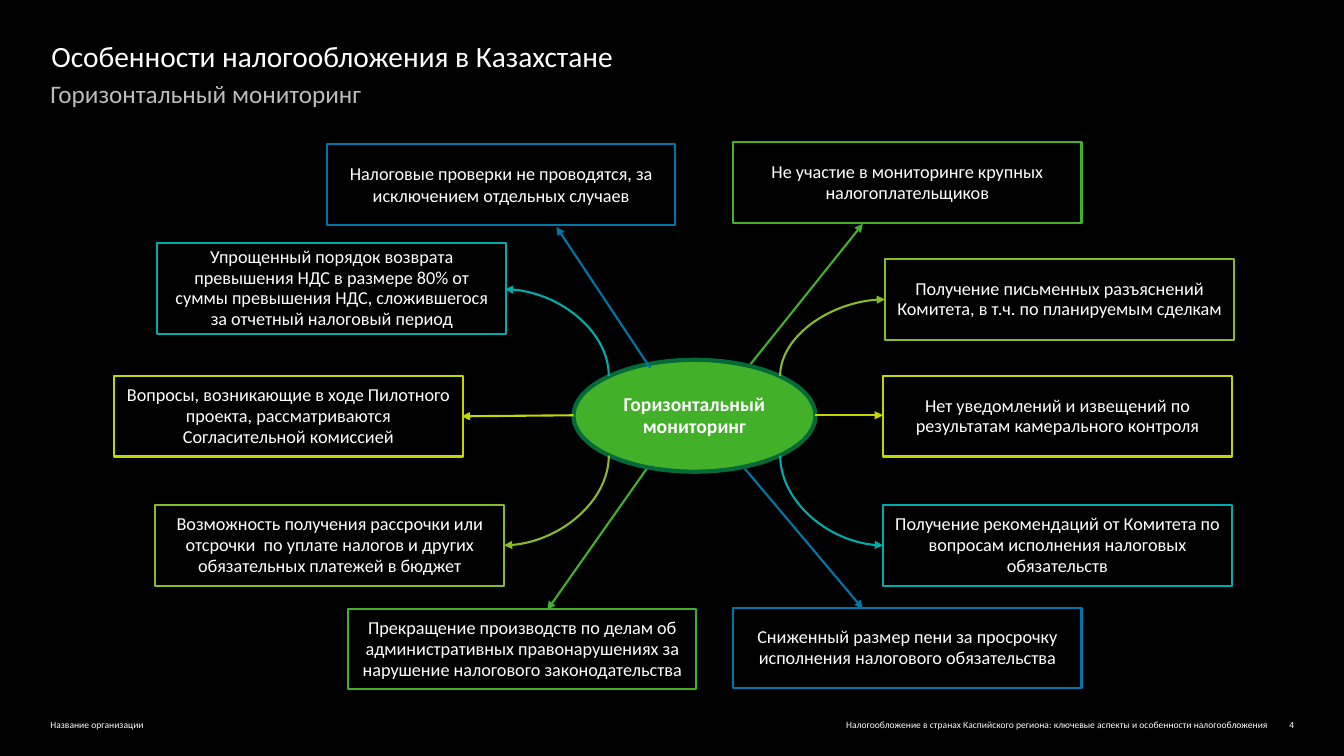
import pptx
import pptx.dml.color
import pptx.enum.shapes
import pptx.enum.text
import pptx.oxml.ns
import pptx.util
from lxml import etree

RGB = pptx.dml.color.RGBColor
KIND = pptx.enum.shapes.MSO_SHAPE
LINK = pptx.enum.shapes.MSO_CONNECTOR
ALIGN = pptx.enum.text.PP_ALIGN
ANCHOR = pptx.enum.text.MSO_ANCHOR
qn = pptx.oxml.ns.qn

BLACK = RGB(0x00, 0x00, 0x00)
WHITE = RGB(0xFF, 0xFF, 0xFF)
GREY = RGB(0xBB, 0xBC, 0xBC)
BLUE = RGB(0x00, 0x76, 0xA8)
TEAL = RGB(0x00, 0xAB, 0xAB)
GREEN = RGB(0x43, 0xB0, 0x2A)
FOREST = RGB(0x04, 0x6A, 0x38)
LIME = RGB(0x86, 0xBC, 0x25)
YELLOW = RGB(0xC4, 0xD6, 0x00)

# The grid has ten columns and ten rows to the inch
COLS, ROWS = 133.33, 75
WIDE, HIGH = 34.6, 8
FONT = "Calibri"

# Boxes: text, colour, left, top, height, line spacing
BOXES = [
    ("Налоговые проверки не проводятся, за исключением отдельных случаев",
     BLUE, 32.4, 14.3, HIGH, 1.0),
    ("Упрощенный порядок возврата превышения НДС в размере 80% от суммы "
     "превышения НДС, сложившегося за отчетный налоговый период",
     TEAL, 15.6, 24.1, 9, 0.95),
    ("Вопросы, возникающие в ходе Пилотного проекта, рассматриваются "
     "Согласительной комиссией", YELLOW, 11.3, 37.3, HIGH, 0.95),
    ("Возможность получения рассрочки или отсрочки  по уплате налогов и "
     "других обязательных платежей в бюджет", LIME, 15.4, 50.1, HIGH, 0.95),
    ("Прекращение производств по делам об административных правонарушениях "
     "за нарушение налогового законодательства",
     GREEN, 34.5, 60.4, HIGH, 0.95),
    ("Не участие в мониторинге крупных налогоплательщиков",
     GREEN, 72.7, 14.1, HIGH, 0.95),
    ("Получение письменных разъяснений Комитета, в т.ч. по планируемым "
     "сделкам", LIME, 87.8, 25.7, HIGH, 0.95),
    ("Нет уведомлений и извещений по результатам камерального контроля",
     YELLOW, 87.6, 37.3, HIGH, 0.95),
    ("Получение рекомендаций от Комитета по вопросам исполнения налоговых "
     "обязательств", TEAL, 87.6, 50.1, HIGH, 0.95),
    ("Сниженный размер пени за просрочку исполнения налогового "
     "обязательства", BLUE, 72.7, 60.3, HIGH, 0.95),
]

# Arrows: colour, tip at the box, root at the hub, curved or not
BACK = [
    (BLUE, (85.6, 60.4), (72.8, 45.2), False),
    (GREEN, (54.3, 60.5), (65, 45.3), False),
    (GREEN, (85.6, 22.2), (73.6, 37.2), False),
]
FRONT = [
    (TEAL, (50.1, 28.7), (60.4, 37.3), True),
    (LIME, (50, 54.1), (60.4, 45.2), True),
    (TEAL, (87.6, 54.1), (77.4, 45.2), True),
    (LIME, (87.8, 29.7), (77.4, 37.3), True),
    (BLUE, (55.2, 22.5), (64.5, 36.5), False),
    (YELLOW, (45.8, 41.3), (56.9, 41.2), False),
    (YELLOW, (87.6, 41.2), (80.9, 41.2), False),
]


def grid(*cells):
    return [pptx.util.Inches(cell / 10) for cell in cells]


def write(shape, text, size=13, color=WHITE, bold=False, align=ALIGN.LEFT,
          anchor=ANCHOR.TOP, inset=0, lead=1.0):
    frame = shape.text_frame
    frame.word_wrap = True
    frame.vertical_anchor = anchor
    frame.margin_left, frame.margin_top, frame.margin_right, \
        frame.margin_bottom = grid(*[inset] * 4)
    para = frame.paragraphs[0]
    para.alignment = align
    para.line_spacing = lead
    run = para.add_run()
    run.text = text
    run.font.name = FONT
    run.font.size = pptx.util.Pt(size)
    run.font.bold = bold
    run.font.color.rgb = color


def label(slide, text, place, **style):
    write(slide.shapes.add_textbox(*grid(*place)), text, **style)


def node(slide, kind, text, place, line, width=1.5, fill=None, **style):
    shape = slide.shapes.add_shape(kind, *grid(*place))
    shape.shadow.inherit = False
    if fill is None:
        shape.fill.background()
    else:
        shape.fill.solid()
        shape.fill.fore_color.rgb = fill
    shape.line.color.rgb = line
    shape.line.width = pptx.util.Pt(width)
    write(shape, text, align=ALIGN.CENTER, anchor=ANCHOR.MIDDLE, inset=1,
          **style)


def arrow(slide, color, tip, root, curved):
    kind = LINK.CURVE if curved else LINK.STRAIGHT
    link = slide.shapes.add_connector(kind, *grid(*tip, *root))
    link.line.color.rgb = color
    link.line.width = pptx.util.Pt(1.5)
    props = link._element.spPr
    if curved:
        # A quarter bend: level at the box, upright at the hub
        props.find(qn("a:prstGeom")).set("prst", "curvedConnector2")
    head = etree.SubElement(props.find(qn("a:ln")), qn("a:headEnd"))
    head.set("type", "triangle")
    etree.SubElement(props, qn("a:effectLst"))


def main():
    deck = pptx.Presentation()
    deck.slide_width, deck.slide_height = grid(COLS, ROWS)
    slide = deck.slides.add_slide(deck.slide_layouts[6])
    slide.background.fill.solid()
    slide.background.fill.fore_color.rgb = BLACK

    # Titles
    label(slide, "Особенности налогообложения в Казахстане",
          (5.1, 3.8, 123.3, 3.7), size=21)
    label(slide, "Горизонтальный мониторинг", (5, 7.8, 123.4, 4.2),
          size=18, color=GREY)

    # Hub, boxes and arrows
    for item in BACK:
        arrow(slide, *item)
    node(slide, KIND.OVAL, "Горизонтальный мониторинг",
         (56.9, 35.7, 24, 11.1), FOREST, width=3, fill=GREEN,
         size=14, bold=True, lead=0.95)
    for text, color, left, top, high, lead in BOXES:
        node(slide, KIND.RECTANGLE, text, (left, top, WIDE, high), color,
             lead=lead)
    for item in FRONT:
        arrow(slide, *item)

    # Footer
    label(slide, "Название организации", (5, 71.3, 60, 1.1), size=6.8)
    label(slide, "Налогообложение в странах Каспийского региона: ключевые "
          "аспекты и особенности налогообложения",
          (72.3, 71.3, 53.5, 1.1), size=6.8, align=ALIGN.RIGHT)
    label(slide, "4", (125, 71.3, 3.4, 1.1), size=6.8, align=ALIGN.RIGHT)

    deck.save("out.pptx")


if __name__ == "__main__":
    main()
